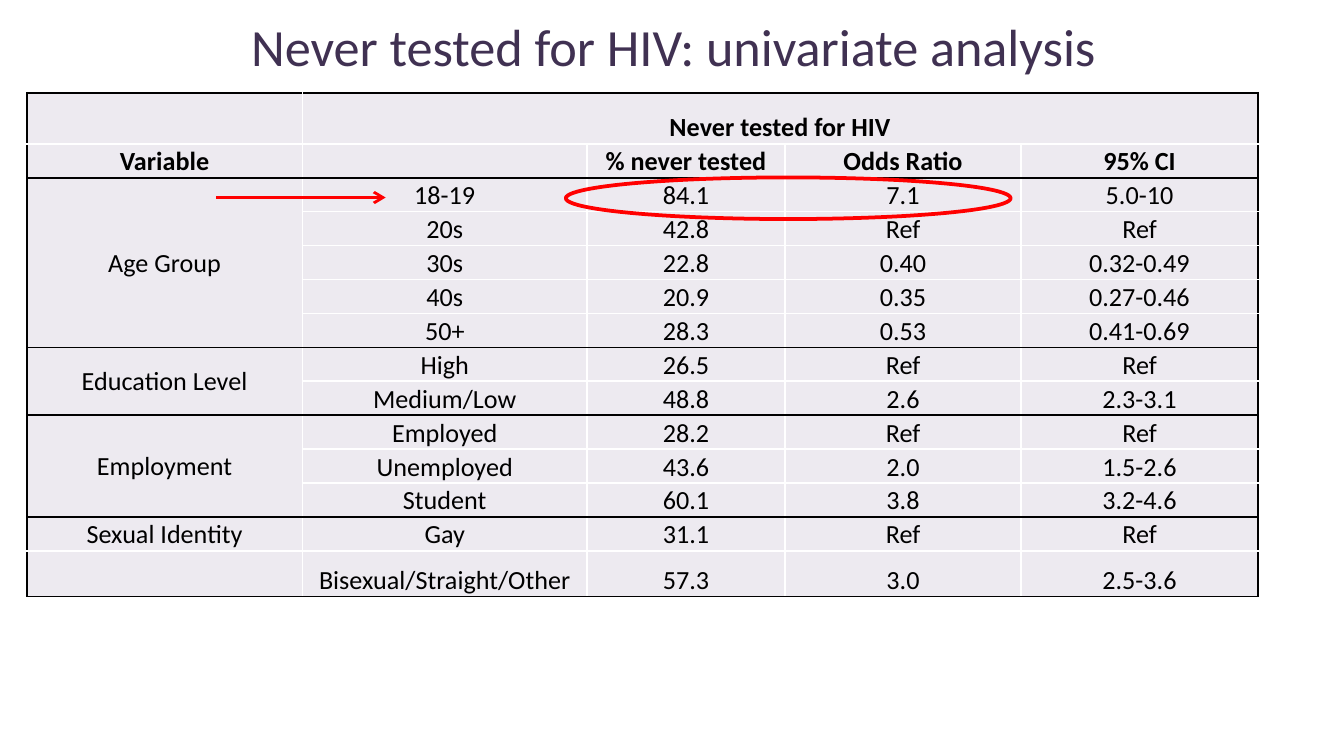
from dataclasses import dataclass

from lxml import etree
from pptx import Presentation
from pptx.dml.color import RGBColor
from pptx.enum.shapes import MSO_CONNECTOR, MSO_SHAPE
from pptx.enum.text import MSO_ANCHOR, PP_ALIGN
from pptx.oxml.ns import qn
from pptx.util import Inches, Pt

CENTER = PP_ALIGN.CENTER
MIDDLE, BOTTOM = MSO_ANCHOR.MIDDLE, MSO_ANCHOR.BOTTOM
ELLIPSE, STRAIGHT = MSO_SHAPE.OVAL, MSO_CONNECTOR.STRAIGHT
TITLE_ONLY_LAYOUT = 5


@dataclass(frozen=True)
class Theme:
    font: str = "Calibri"
    title_color: str = "403152"
    text_color: str = "000000"
    cell_fill: str = "EDEAF0"
    grid_color: str = "FFFFFF"
    rule_color: str = "000000"
    highlight: str = "FF0000"
    title_size: float = 28
    table_size: float = 14
    border_width: float = 1


@dataclass(frozen=True)
class Box:
    left: float
    top: float
    width: float
    height: float

    def lengths(self) -> list:
        return [Inches(n) for n in (self.left, self.top, self.width, self.height)]


@dataclass(frozen=True)
class Section:
    variable: str
    rows: tuple
    merged: bool = True


THEME = Theme()
SLIDE_WIDTH = 10
SLIDE_HEIGHT = SLIDE_WIDTH * 9 / 16
TITLE_BOX = Box(0.51, 0, 9, 0.68)
TABLE_BOX = Box(0.2, 0.69, 9.16, 3.75)
ELLIPSE_BOX = Box(4.21, 1.32, 3.31, 0.31)
COLUMN_WIDTHS = (2.05, 2.12, 1.47, 1.76, 1.76)
FIRST_ROW_HEIGHT, LAST_ROW_HEIGHT = 0.38, 0.34

HEADER_ROWS = (
    ("", "Never tested for HIV", "", "", ""),
    ("Variable", "", "% never tested", "Odds Ratio", "95% CI"),
)
SECTIONS = (
    Section("Age Group", (
        ("18-19", "84.1", "7.1", "5.0-10"),
        ("20s", "42.8", "Ref", "Ref"),
        ("30s", "22.8", "0.40", "0.32-0.49"),
        ("40s", "20.9", "0.35", "0.27-0.46"),
        ("50+", "28.3", "0.53", "0.41-0.69"),
    )),
    Section("Education Level", (
        ("High", "26.5", "Ref", "Ref"),
        ("Medium/Low", "48.8", "2.6", "2.3-3.1"),
    )),
    Section("Employment", (
        ("Employed", "28.2", "Ref", "Ref"),
        ("Unemployed", "43.6", "2.0", "1.5-2.6"),
        ("Student", "60.1", "3.8", "3.2-4.6"),
    )),
    Section("Sexual Identity", (
        ("Gay", "31.1", "Ref", "Ref"),
        ("Bisexual/Straight/Other", "57.3", "3.0", "2.5-3.6"),
    ), merged=False),
)


def apply_format(target, values: dict) -> None:
    for name, value in values.items():
        setattr(target, name, value)


def format_text(paragraph, size: float, color: str, bold: bool = False) -> None:
    paragraph.alignment = CENTER
    for run in paragraph.runs:
        apply_format(run.font, {"name": THEME.font, "size": Pt(size), "bold": bold})
        run.font.color.rgb = RGBColor.from_string(color)
    if not paragraph.runs:
        # Keep an empty cell from stretching its row
        etree.SubElement(paragraph._p, qn("a:endParaRPr"), sz=str(int(size * 100)))


def add_border(cell, side: str, black: bool) -> None:
    line = etree.SubElement(cell._tc.get_or_add_tcPr(), qn(f"a:ln{side}"),
                            w=str(Pt(THEME.border_width)))
    fill = etree.SubElement(line, qn("a:solidFill"))
    etree.SubElement(fill, qn("a:srgbClr"),
                     val=THEME.rule_color if black else THEME.grid_color)


def format_cell(cell, text: str, edges: dict, bold: bool, anchor) -> None:
    cell.text = text
    format_text(cell.text_frame.paragraphs[0], THEME.table_size, THEME.text_color, bold)
    apply_format(cell, {
        "margin_left": Inches(0.01), "margin_right": Inches(0.01),
        "margin_top": Inches(0.01), "margin_bottom": 0, "vertical_anchor": anchor,
    })
    for side, black in edges.items():
        add_border(cell, side, black)
    cell.fill.solid()
    cell.fill.fore_color.rgb = RGBColor.from_string(THEME.cell_fill)


def add_results_table(slide) -> None:
    # Flatten the sections, noting the rows where a black rule falls
    rows, rules, section_starts = list(HEADER_ROWS), {0}, {}
    for section in SECTIONS:
        section_starts[len(rows)] = section
        rules.add(len(rows))
        for index, values in enumerate(section.rows):
            rows.append((section.variable if index == 0 else "", *values))
    rules.add(len(rows))

    row_count, column_count = len(rows), len(COLUMN_WIDTHS)
    table = slide.shapes.add_table(row_count, column_count, *TABLE_BOX.lengths()).table
    apply_format(table, {"first_row": False, "horz_banding": False})
    for column, width in zip(table.columns, COLUMN_WIDTHS):
        column.width = Inches(width)
    inner_height = (TABLE_BOX.height - FIRST_ROW_HEIGHT - LAST_ROW_HEIGHT) / (row_count - 2)
    heights = [FIRST_ROW_HEIGHT, *[inner_height] * (row_count - 2), LAST_ROW_HEIGHT]
    for row, height in zip(table.rows, heights):
        row.height = Inches(height)

    # Merged heading and variable names
    table.cell(0, 1).merge(table.cell(0, column_count - 1))
    for start, section in section_starts.items():
        if section.merged:
            table.cell(start, 0).merge(table.cell(start + len(section.rows) - 1, 0))

    # Black outer edges and section rules, white grid elsewhere
    for row_index, values in enumerate(rows):
        for column_index, text in enumerate(values):
            cell = table.cell(row_index, column_index)
            row_span = cell.span_height if cell.is_merge_origin else 1
            column_span = cell.span_width if cell.is_merge_origin else 1
            edges = {
                "L": column_index == 0,
                "R": column_index + column_span == column_count,
                "T": row_index in rules,
                "B": row_index + row_span in rules,
            }
            is_variable = column_index == 0 and row_index in section_starts
            format_cell(cell, text, edges, row_index < len(HEADER_ROWS),
                        MIDDLE if is_variable else BOTTOM)


def add_title(slide, text: str) -> None:
    title = slide.shapes.title
    left, top, width, height = TITLE_BOX.lengths()
    apply_format(title, {"left": left, "top": top, "width": width, "height": height})
    title.text_frame.text = text
    title.text_frame.vertical_anchor = MIDDLE
    format_text(title.text_frame.paragraphs[0], THEME.title_size, THEME.title_color)


def format_highlight(line, width: float) -> None:
    line.color.rgb = RGBColor.from_string(THEME.highlight)
    line.width = Pt(width)


def add_highlight(slide) -> None:
    # Ring around the youngest group's figures
    ellipse = slide.shapes.add_shape(ELLIPSE, *ELLIPSE_BOX.lengths())
    ellipse.shadow.inherit = False
    ellipse.fill.background()
    format_highlight(ellipse.line, 2)

    # Arrow towards the youngest group
    arrow = slide.shapes.add_connector(
        STRAIGHT, Inches(1.61), Inches(1.47), Inches(2.87), Inches(1.47))
    format_highlight(arrow.line, 1.5)
    etree.SubElement(arrow.line._get_or_add_ln(), qn("a:tailEnd"), type="arrow")
    etree.SubElement(arrow._element.spPr, qn("a:effectLst"))


def main() -> None:
    presentation = Presentation()
    apply_format(presentation, {
        "slide_width": Inches(SLIDE_WIDTH), "slide_height": Inches(SLIDE_HEIGHT),
    })
    slide = presentation.slides.add_slide(presentation.slide_layouts[TITLE_ONLY_LAYOUT])
    add_title(slide, "Never tested for HIV: univariate analysis")
    add_results_table(slide)
    add_highlight(slide)
    presentation.save("out.pptx")


if __name__ == "__main__":
    main()
